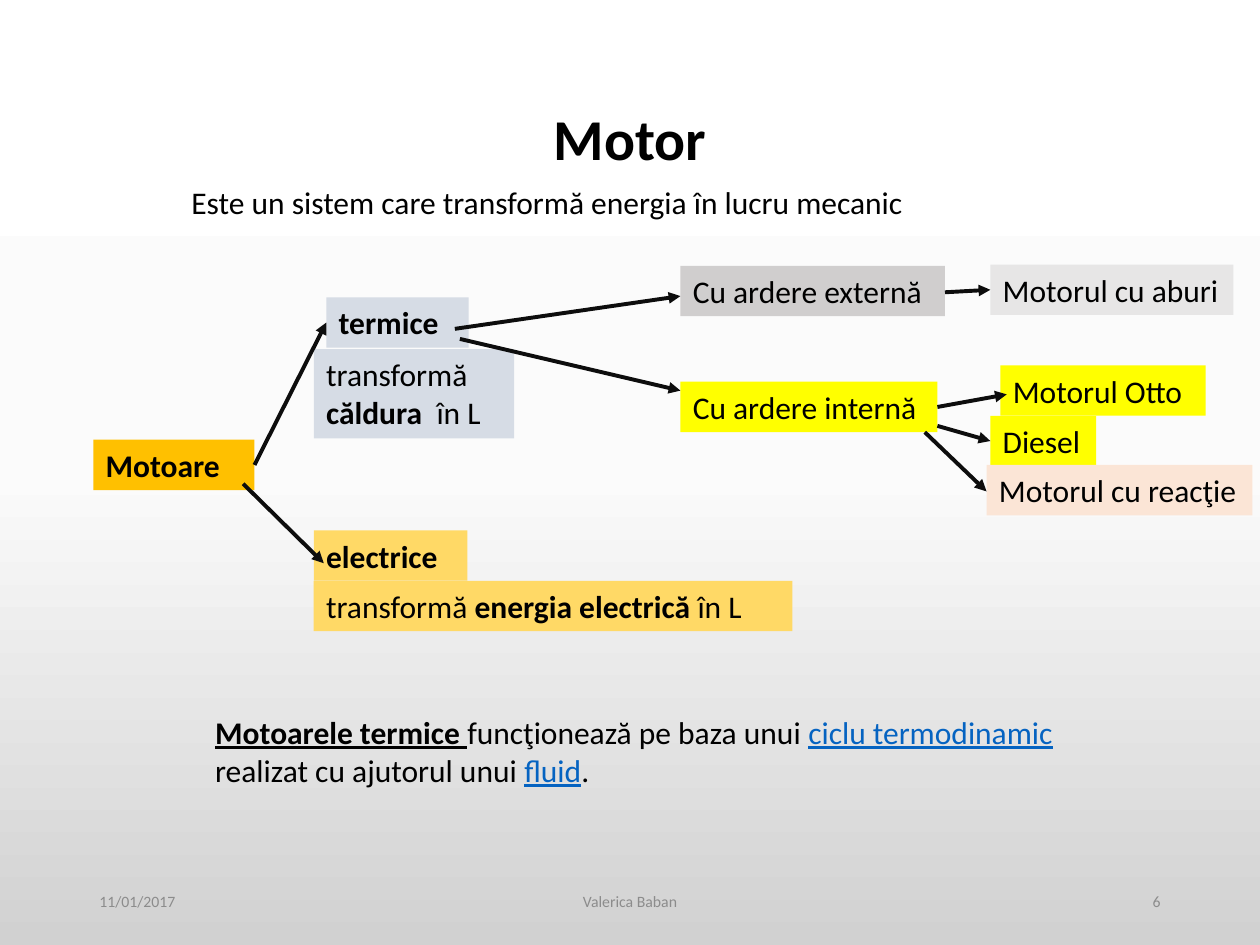
from copy import deepcopy
from dataclasses import dataclass

from lxml.etree import SubElement
from pptx import Presentation
from pptx.dml.color import RGBColor
from pptx.enum.shapes import MSO_CONNECTOR, MSO_SHAPE
from pptx.enum.text import MSO_ANCHOR, PP_ALIGN
from pptx.oxml.ns import qn
from pptx.util import Inches, Pt

FONT = "Calibri"
BLACK, GREY, LINK, ARROW = "000000", "8C8C8C", "0563C1", "0D0D0D"
BLUE_GREY, AMBER, YELLOW = "D6DCE5", "FFD966", "FFFF00"
ROW = 0.4


@dataclass
class Run:
    text: str
    bold: bool = False
    underline: bool = False
    color: str = BLACK


@dataclass
class Box:
    left: float
    top: float
    width: float
    fill: str
    paragraphs: list[list[Run]]
    height: float = ROW


@dataclass
class Arrow:
    start: tuple[float, float]
    end: tuple[float, float]


BOXES = [
    Box(0.74, 3.49, 1.28, "FFC000", [[Run("Motoare", bold=True)]]),
    Box(2.59, 2.36, 1.13, BLUE_GREY, [[Run("termice", bold=True)]]),
    Box(2.49, 4.21, 1.22, AMBER, [[Run("electrice", bold=True)]]),
    Box(2.49, 2.77, 1.59, BLUE_GREY,
        [[Run("transformă")], [Run("căldura", bold=True), Run("  în L")]], height=0.71),
    Box(2.49, 4.61, 3.8, AMBER,
        [[Run("transformă "), Run("energia electrică ", bold=True), Run("în L")]]),
    Box(5.4, 2.11, 2.1, "D0CECE", [[Run("Cu ardere externă")]]),
    Box(5.4, 3.03, 2.04, YELLOW, [[Run("Cu ardere internă")]]),
    Box(7.86, 2.1, 1.93, "E7E6E6", [[Run("Motorul cu aburi")]]),
    Box(7.94, 2.9, 1.63, YELLOW, [[Run("Motorul Otto")]]),
    Box(7.86, 3.3, 0.84, YELLOW, [[Run("Diesel")]]),
    Box(7.83, 3.69, 2.11, "FBE5D6", [[Run("Motorul cu reacţie")]]),
]

ARROWS = [
    Arrow((2.02, 3.69), (2.59, 2.56)),
    Arrow((1.93, 3.84), (2.57, 4.47)),
    Arrow((3.61, 2.61), (5.4, 2.35)),
    Arrow((3.65, 2.69), (5.4, 3.1)),
    Arrow((7.5, 2.32), (7.86, 2.3)),
    Arrow((7.44, 3.23), (7.99, 3.13)),
    Arrow((7.44, 3.38), (7.86, 3.5)),
    Arrow((7.34, 3.43), (7.83, 3.9)),
]

THERMAL_NOTE = [[
    Run("Motoarele termice ", bold=True, underline=True),
    Run("funcţionează pe baza unui "),
    Run("ciclu termodinamic", underline=True, color=LINK),
    Run(" realizat cu ajutorul unui "),
    Run("fluid", underline=True, color=LINK),
    Run("."),
]]


def rgb(color: str) -> RGBColor:
    return RGBColor.from_string(color)


def write_text(shape, paragraphs: list[list[Run]], *, size: float = 18,
               align=PP_ALIGN.LEFT, anchor=MSO_ANCHOR.TOP, wrap: bool = True,
               line_spacing: float | None = None) -> None:
    frame = shape.text_frame
    frame.word_wrap = wrap
    frame.vertical_anchor = anchor
    for index, runs in enumerate(paragraphs):
        paragraph = frame.add_paragraph() if index else frame.paragraphs[0]
        paragraph.alignment = align
        paragraph.line_spacing = line_spacing
        for item in runs:
            run = paragraph.add_run()
            run.text = item.text
            run.font.name = FONT
            run.font.size = Pt(size)
            run.font.bold = item.bold
            run.font.underline = item.underline
            run.font.color.rgb = rgb(item.color)


def add_text(slide, left: float, top: float, width: float, height: float,
             paragraphs: list[list[Run]], **text_format) -> None:
    shape = slide.shapes.add_textbox(Inches(left), Inches(top), Inches(width), Inches(height))
    write_text(shape, paragraphs, **text_format)


def add_box(slide, box: Box) -> None:
    shape = slide.shapes.add_shape(MSO_SHAPE.RECTANGLE, Inches(box.left), Inches(box.top),
                                   Inches(box.width), Inches(box.height))
    shape.shadow.inherit = False
    shape.fill.solid()
    shape.fill.fore_color.rgb = rgb(box.fill)
    shape.line.fill.background()
    write_text(shape, box.paragraphs, wrap=False)


def add_arrow(slide, arrow: Arrow) -> None:
    points = [Inches(value) for value in (*arrow.start, *arrow.end)]
    connector = slide.shapes.add_connector(MSO_CONNECTOR.STRAIGHT, *points)
    connector.line.color.rgb = rgb(ARROW)
    connector.line.width = Pt(2.25)
    SubElement(connector.line._get_or_add_ln(), qn("a:tailEnd"), type="triangle")
    SubElement(connector._element.spPr, qn("a:effectLst"))


def paint_background(slide) -> None:
    """Fill the slide with a vertical gradient of three stops."""
    fill = slide.background.fill
    fill.gradient()
    fill.gradient_angle = 270
    stop_list = slide._element.find(".//" + qn("a:gsLst"))
    stop_list.insert(1, deepcopy(stop_list[0]))
    colors = ("FFFFFF", "FBFBFB", "D1D1D1")
    for index, (stop, color) in enumerate(zip(fill.gradient_stops, colors)):
        stop.position = index / 2
        stop.color.rgb = rgb(color)


def main() -> None:
    presentation = Presentation()
    presentation.slide_width, presentation.slide_height = Inches(10), Inches(7.5)
    slide = presentation.slides.add_slide(presentation.slide_layouts[5])
    paint_background(slide)

    title = slide.shapes.title
    title.left, title.top = Inches(0.69), Inches(0.4)
    title.width, title.height = Inches(8.62), Inches(1.45)
    write_text(title, [[Run("Motor", bold=True)]], size=33, align=PP_ALIGN.CENTER,
               anchor=MSO_ANCHOR.MIDDLE, line_spacing=0.9)

    footers = [(0.69, 2.25, "11/01/2017", PP_ALIGN.LEFT),
               (3.31, 3.38, "Valerica Baban", PP_ALIGN.CENTER),
               (7.06, 2.25, "6", PP_ALIGN.RIGHT)]
    for left, width, text, align in footers:
        add_text(slide, left, 6.95, width, ROW, [[Run(text, color=GREY)]],
                 size=9, align=align, anchor=MSO_ANCHOR.MIDDLE)

    add_text(slide, 1.42, 1.4, 5.92, ROW,
             [[Run("Este un sistem care transformă energia în lucru mecanic")]], wrap=False)
    for box in BOXES:
        add_box(slide, box)
    for arrow in ARROWS:
        add_arrow(slide, arrow)
    add_text(slide, 1.61, 5.61, 7.33, 0.71, THERMAL_NOTE)

    presentation.save("out.pptx")


if __name__ == "__main__":
    main()
